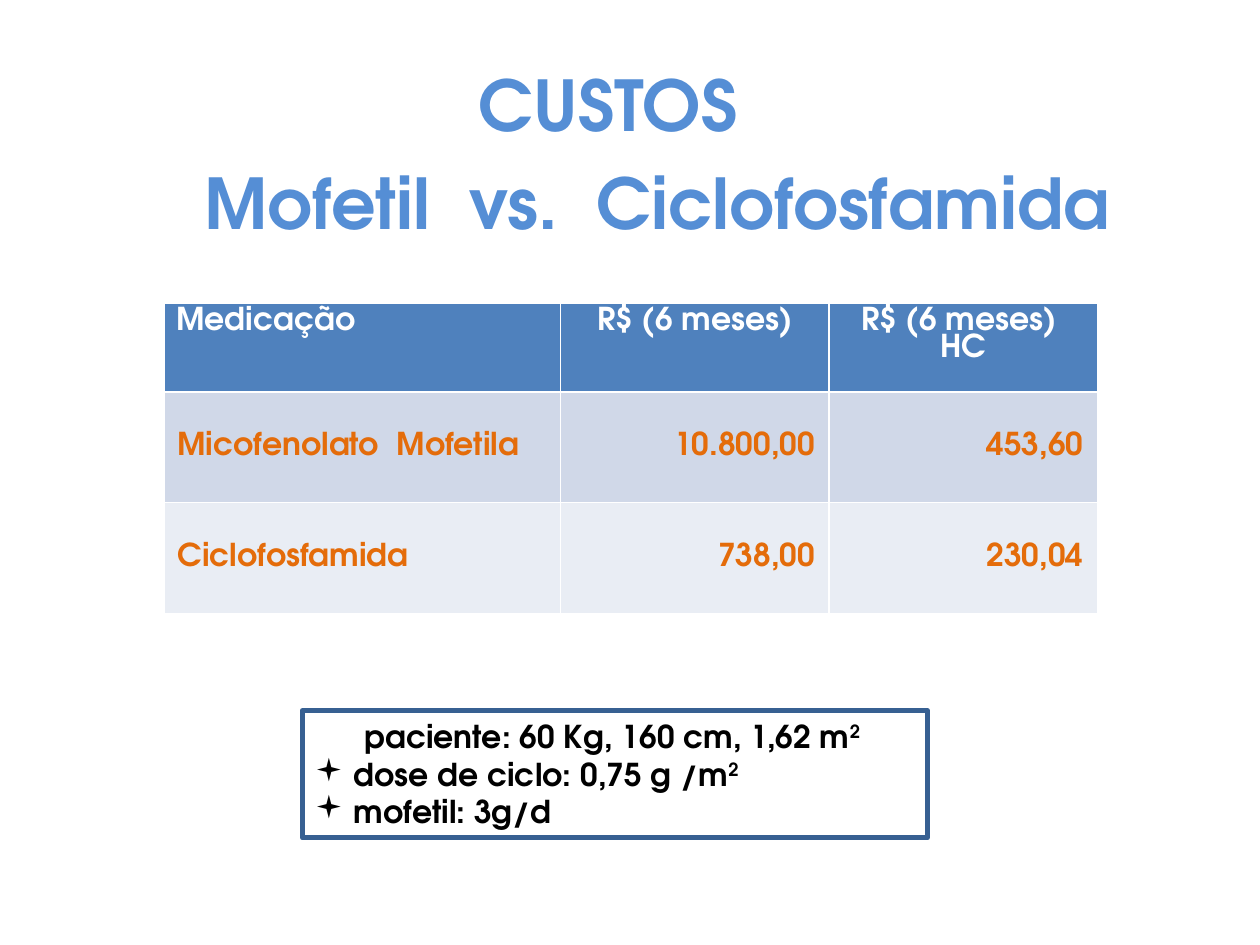
from dataclasses import dataclass

from lxml import etree
from pptx import Presentation
from pptx.dml.color import RGBColor
from pptx.enum.shapes import MSO_SHAPE
from pptx.enum.text import MSO_ANCHOR, MSO_AUTO_SIZE, PP_ALIGN
from pptx.oxml.ns import qn
from pptx.util import Inches, Pt

LEFT, CENTER, RIGHT = PP_ALIGN.LEFT, PP_ALIGN.CENTER, PP_ALIGN.RIGHT
TOP, MIDDLE = MSO_ANCHOR.TOP, MSO_ANCHOR.MIDDLE
NO_AUTOFIT = MSO_AUTO_SIZE.NONE
RECTANGLE = MSO_SHAPE.RECTANGLE
TITLE_ONLY = 5


@dataclass(frozen=True)
class Theme:
    font: str = "TeX Gyre Adventor"
    bullet_font: str = "Wingdings"
    title_size: int = 40
    body_size: int = 18
    title: str = "558ED5"
    header: str = "4F81BD"
    bands: tuple = ("D0D8E8", "E9EDF4")
    value: str = "E46C0A"
    white: str = "FFFFFF"
    black: str = "000000"
    frame: str = "376092"


THEME = Theme()


def rgb(value):
    return RGBColor.from_string(value)


def add_text(tf, text, first=False, size=THEME.body_size, color=THEME.black,
             align=LEFT, margin=0, indent=0, bullet=None, before=0, spacing=None):
    """Write one paragraph; pieces after a ^ alternate between raised and normal."""
    p = tf.paragraphs[0] if first else tf.add_paragraph()
    p.alignment = align
    p.space_before = Pt(before)
    if spacing:
        p.line_spacing = spacing
    p_pr = p._p.get_or_add_pPr()
    p_pr.set("marL", str(Inches(margin)))
    p_pr.set("indent", str(Inches(indent)))
    if bullet:
        etree.SubElement(p_pr, qn("a:buFont")).set("typeface", THEME.bullet_font)
        etree.SubElement(p_pr, qn("a:buChar")).set("char", bullet)
    for i, piece in enumerate(text.split("^")):
        if not piece:
            continue
        r = p.add_run()
        r.text = piece
        r.font.name = THEME.font
        r.font.size = Pt(size)
        r.font.bold = True
        r.font.color.rgb = rgb(color)
        if i % 2:
            r.font._element.set("baseline", "30000")


def add_title(s):
    sp = s.shapes.title
    sp.left, sp.top, sp.width, sp.height = map(Inches, (0.28, 0.44, 9.13, 1.73))
    tf = sp.text_frame
    tf.word_wrap = True
    tf.auto_size = NO_AUTOFIT
    tf.vertical_anchor = TOP
    lines = (("CUSTOS ", 0.12), ("Mofetil  vs.  Ciclofosfamida", 0.74))
    for i, (text, margin) in enumerate(lines):
        add_text(tf, text, first=i == 0, size=THEME.title_size, color=THEME.title,
                 align=CENTER, margin=margin, before=8)


def set_borders(cell):
    tc_pr = cell._tc.get_or_add_tcPr()
    for i, side in enumerate("LRTB"):
        ln = etree.Element(qn(f"a:ln{side}"), w=str(Pt(1)))
        fill = etree.SubElement(ln, qn("a:solidFill"))
        etree.SubElement(fill, qn("a:srgbClr"), val=THEME.white)
        tc_pr.insert(i, ln)


def fill_cell(cell, lines, fill, inset, anchor, **fmt):
    cell.fill.solid()
    cell.fill.fore_color.rgb = rgb(fill)
    cell.margin_left = cell.margin_right = Inches(inset)
    cell.vertical_anchor = anchor
    set_borders(cell)
    for i, text in enumerate(lines):
        add_text(cell.text_frame, text, first=i == 0, **fmt)


def add_cost_table(s):
    header = (["Medicação"], ["R$ (6 meses)"], ["R$ (6 meses) ", "HC"])
    costs = (("Micofenolato  Mofetila", "10.800,00", "453,60"),
             ("Ciclofosfamida", "738,00", "230,04"))
    table = s.shapes.add_table(3, 3, Inches(1.3), Inches(2.41),
                               Inches(7.4), Inches(2.46)).table
    for col, width in zip(table.columns, (3.15, 2.13, 2.13)):
        col.width = Inches(width)
    for row, height in zip(table.rows, (0.7, 0.88, 0.88)):
        row.height = Inches(height)
    for c, lines in enumerate(header):
        fill_cell(table.cell(0, c), lines, THEME.header, 0.1, TOP,
                  color=THEME.white, align=CENTER if c else LEFT, spacing=0.9)
    for r, (values, band) in enumerate(zip(costs, THEME.bands), start=1):
        for c, text in enumerate(values):
            fill_cell(table.cell(r, c), [text], band, 0.11, MIDDLE,
                      color=THEME.value, align=RIGHT if c else LEFT)


def add_patient_box(s):
    sp = s.shapes.add_shape(RECTANGLE, Inches(2.4), Inches(5.64),
                            Inches(4.96), Inches(1.01))
    sp.shadow.inherit = False
    sp.fill.background()
    sp.line.color.rgb = rgb(THEME.frame)
    sp.line.width = Pt(3)
    tf = sp.text_frame
    tf.word_wrap = True
    tf.vertical_anchor = TOP
    add_text(tf, "paciente: 60 Kg, 160 cm, 1,62 m^2 ", first=True, align=CENTER)
    for text in ("dose de ciclo: 0,75 g /m^2", "mofetil: 3g/d"):
        add_text(tf, text, margin=0.31, indent=-0.31, bullet="▪")


def main():
    prs = Presentation()
    prs.slide_width, prs.slide_height = Inches(10), Inches(7.5)
    s = prs.slides.add_slide(prs.slide_layouts[TITLE_ONLY])
    add_title(s)
    add_cost_table(s)
    add_patient_box(s)
    prs.save("out.pptx")


if __name__ == "__main__":
    main()
